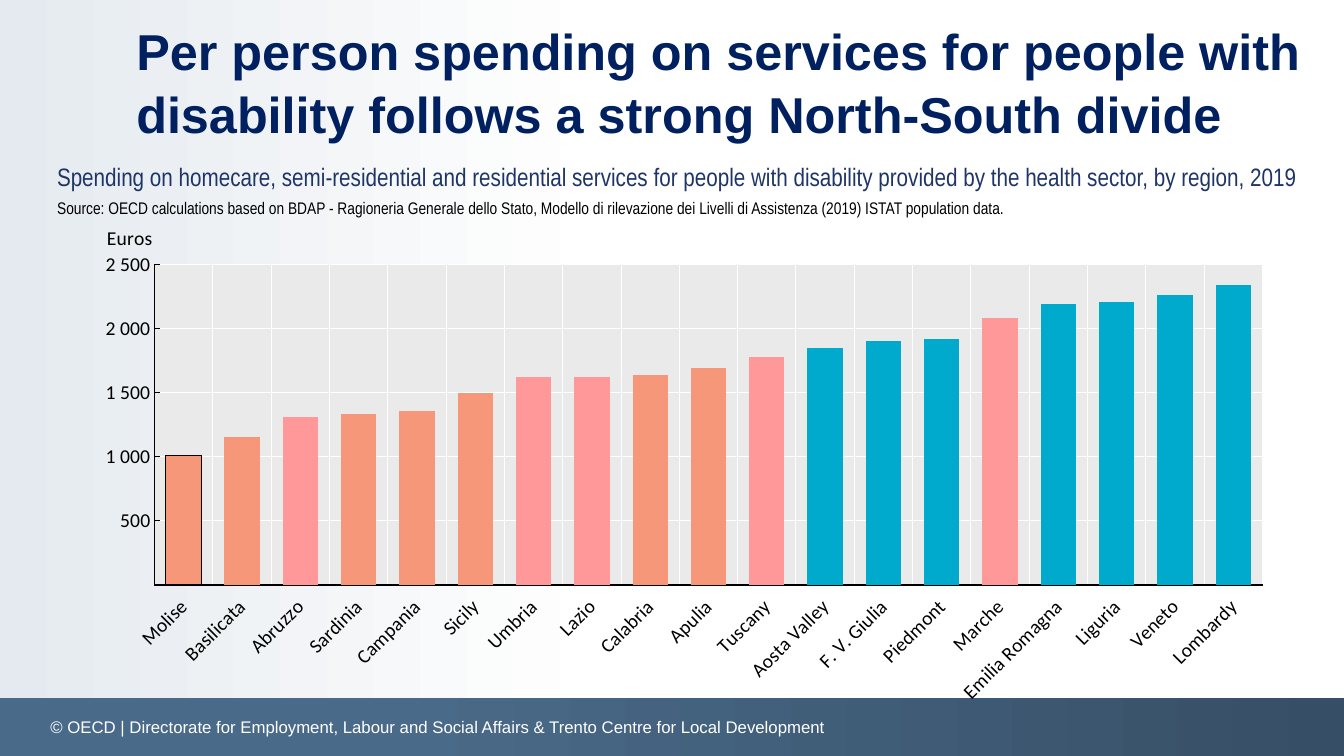
import pptx
import pptx.util
import pptx.chart.data
import pptx.dml.color
import pptx.enum.chart
import pptx.enum.shapes
import pptx.enum.text
import pptx.oxml.ns
import pptx.oxml.xmlchemy

Cm = pptx.util.Cm
Pt = pptx.util.Pt
qn = pptx.oxml.ns.qn
new_element = pptx.oxml.xmlchemy.OxmlElement
PP_ALIGN = pptx.enum.text.PP_ALIGN
ANCHOR = pptx.enum.text.MSO_ANCHOR

COLORS = {
    "title": "002060", "subtitle": "1E3566", "black": "000000", "white": "FFFFFF",
    "footer_dark": "374F66", "footer_light": "496A88", "fade": "E4EAEF",
    "plot": "EAEAEA", "South": "F79779", "Centre": "FF9999", "North": "00AACC",
}

SPENDING = [
    ("Molise", "South", 1010), ("Basilicata", "South", 1150), ("Abruzzo", "Centre", 1310),
    ("Sardinia", "South", 1330), ("Campania", "South", 1360), ("Sicily", "South", 1500),
    ("Umbria", "Centre", 1620), ("Lazio", "Centre", 1620), ("Calabria", "South", 1640),
    ("Apulia", "South", 1690), ("Tuscany", "Centre", 1780), ("Aosta Valley", "North", 1850),
    ("F. V. Giulia", "North", 1900), ("Piedmont", "North", 1920), ("Marche", "Centre", 2080),
    ("Emilia Romagna", "North", 2190), ("Liguria", "North", 2210), ("Veneto", "North", 2260),
    ("Lombardy", "North", 2340),
]


def rgb(name):
    return pptx.dml.color.RGBColor.from_string(COLORS[name])


def style_font(font, name, size, color, bold=False):
    font.name = name
    font.size = Pt(size)
    font.bold = bold
    font.color.rgb = rgb(color)


def write_text(frame, text, font="Arial", size=12, color="black", bold=False,
               align=PP_ALIGN.LEFT, anchor=ANCHOR.TOP, line_spacing=None):
    frame.word_wrap = True
    frame.auto_size = pptx.enum.text.MSO_AUTO_SIZE.NONE
    frame.vertical_anchor = anchor
    paragraph = frame.paragraphs[0]
    paragraph.alignment = align
    paragraph.line_spacing = line_spacing
    run = paragraph.add_run()
    run.text = text
    style_font(run.font, font, size, color, bold)


def add_text(slide, box, text, **style):
    label = slide.shapes.add_textbox(*map(Cm, box))
    write_text(label.text_frame, text, **style)


def add_gradient_band(slide, box, right, left, reach):
    band = slide.shapes.add_shape(pptx.enum.shapes.MSO_SHAPE.RECTANGLE, *map(Cm, box))
    band.shadow.inherit = False
    band.line.fill.background()
    band.fill.gradient()
    band.fill.gradient_angle = 180
    stops = band.fill.gradient_stops
    for stop, position, color in zip(stops, (0, reach), (right, left)):
        stop.position = position
        stop.color.rgb = rgb(color)


def set_layout(parent, **places):
    layout = parent.find(qn("c:layout"))
    if layout is None:
        layout = new_element("c:layout")
        parent.insert(0, layout)
    manual = new_element("c:manualLayout")
    layout.append(manual)
    for tag, value in places.items():
        entry = new_element(f"c:{tag}")
        entry.set("val", str(value))
        manual.append(entry)


def fill_plot_area(plot_area, color):
    properties = new_element("c:spPr")
    fill = new_element("a:solidFill")
    shade = new_element("a:srgbClr")
    shade.set("val", COLORS[color])
    fill.append(shade)
    properties.append(fill)
    plot_area.append(properties)


def style_line(line, color):
    line.color.rgb = rgb(color)
    line.width = Pt(0.75)


def style_axis(axis, tick):
    axis.has_major_gridlines = True
    style_line(axis.major_gridlines.format.line, "white")
    style_line(axis.format.line, "black")
    axis.major_tick_mark = tick
    axis.minor_tick_mark = pptx.enum.chart.XL_TICK_MARK.NONE
    style_font(axis.tick_labels.font, "Calibri", 14, "black")


def add_spending_chart(slide, box):
    data = pptx.chart.data.CategoryChartData()
    data.categories = [region for region, _, _ in SPENDING]
    data.add_series("Series 1", [euros for _, _, euros in SPENDING])
    chart = slide.shapes.add_chart(
        pptx.enum.chart.XL_CHART_TYPE.COLUMN_CLUSTERED, *map(Cm, box), data).chart
    chart.has_legend = False
    chart.has_title = False
    style_font(chart.font, "Calibri", 14, "black")

    plot = chart.plots[0]
    plot.gap_width = 65
    plot.vary_by_categories = False
    spending = plot.series[0]
    spending.format.fill.solid()
    spending.format.fill.fore_color.rgb = rgb("North")
    for index, (_, area, _) in enumerate(SPENDING):
        if area != "North":
            column = spending.points[index].format
            column.fill.solid()
            column.fill.fore_color.rgb = rgb(area)
    style_line(spending.points[0].format.line, "black")

    regions, euros = chart.category_axis, chart.value_axis
    style_axis(regions, pptx.enum.chart.XL_TICK_MARK.NONE)
    regions.tick_label_position = pptx.enum.chart.XL_TICK_LABEL_POSITION.LOW
    regions._element.find(qn("c:txPr")).find(qn("a:bodyPr")).set("rot", "-2700000")

    style_axis(euros, pptx.enum.chart.XL_TICK_MARK.INSIDE)
    euros.minimum_scale, euros.maximum_scale, euros.major_unit = 0, 2500, 500
    euros.tick_labels.number_format = r"#\ ###"
    euros.tick_labels.number_format_is_linked = False
    unit = euros.axis_title
    write_text(unit.text_frame, "Euros", font="Calibri", size=14)
    unit.text_frame._txBody.find(qn("a:bodyPr")).set("rot", "0")
    set_layout(unit._element, xMode="edge", yMode="edge", x=0.02, y=0.01)

    plot_area = chart._chartSpace.chart.plotArea
    set_layout(plot_area, layoutTarget="inner", xMode="edge", yMode="edge",
               x=0.063, y=0.099, w=0.935, h=0.655)
    fill_plot_area(plot_area, "plot")


def main():
    deck = pptx.Presentation()
    deck.slide_width, deck.slide_height = Cm(33.87), Cm(19.05)
    slide = deck.slides.add_slide(deck.slide_layouts[5])

    add_gradient_band(slide, (0, 17.6, 33.87, 1.45), "footer_dark", "footer_light", 0.7)
    add_gradient_band(slide, (0, 0, 15.29, 17.6), "white", "fade", 1)
    add_text(slide, (1.02, 17.98, 25, 0.69),
             "© OECD | Directorate for Employment, Labour and Social Affairs & "
             "Trento Centre for Local Development",
             color="white", anchor=ANCHOR.MIDDLE)

    title = slide.shapes.title
    title.left, title.top, title.width, title.height = map(Cm, (3.18, 0.61, 29.92, 2.84))
    write_text(title.text_frame,
               "Per person spending on services for people with disability "
               "follows a strong North-South divide",
               size=36, color="title", bold=True, anchor=ANCHOR.MIDDLE,
               line_spacing=Pt(45.3))
    slide.shapes._spTree.append(title._element)

    add_text(slide, (0.79, 3.94, 32.56, 1.02),
             "Spending on homecare, semi-residential and residential services for people "
             "with disability provided by the health sector, by region, 2019",
             font="Arial Narrow", size=18, color="subtitle", align=PP_ALIGN.CENTER)
    add_text(slide, (1.19, 4.85, 30.73, 0.76),
             "Source: OECD calculations based on BDAP - Ragioneria Generale dello Stato, "
             "Modello di rilevazione dei Livelli di Assistenza (2019) ISTAT population data.",
             font="Arial Narrow")
    add_spending_chart(slide, (2.01, 5.44, 29.87, 12.34))
    deck.save("out.pptx")


if __name__ == "__main__":
    main()
